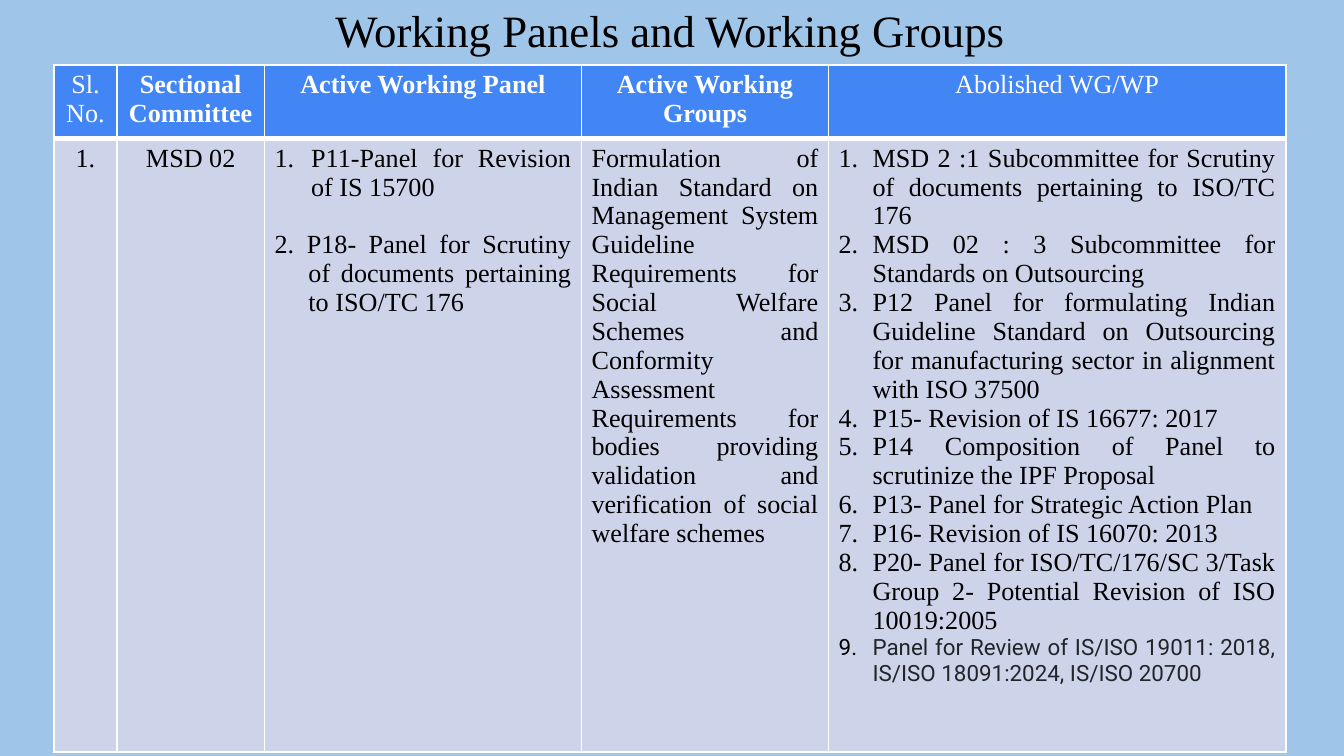
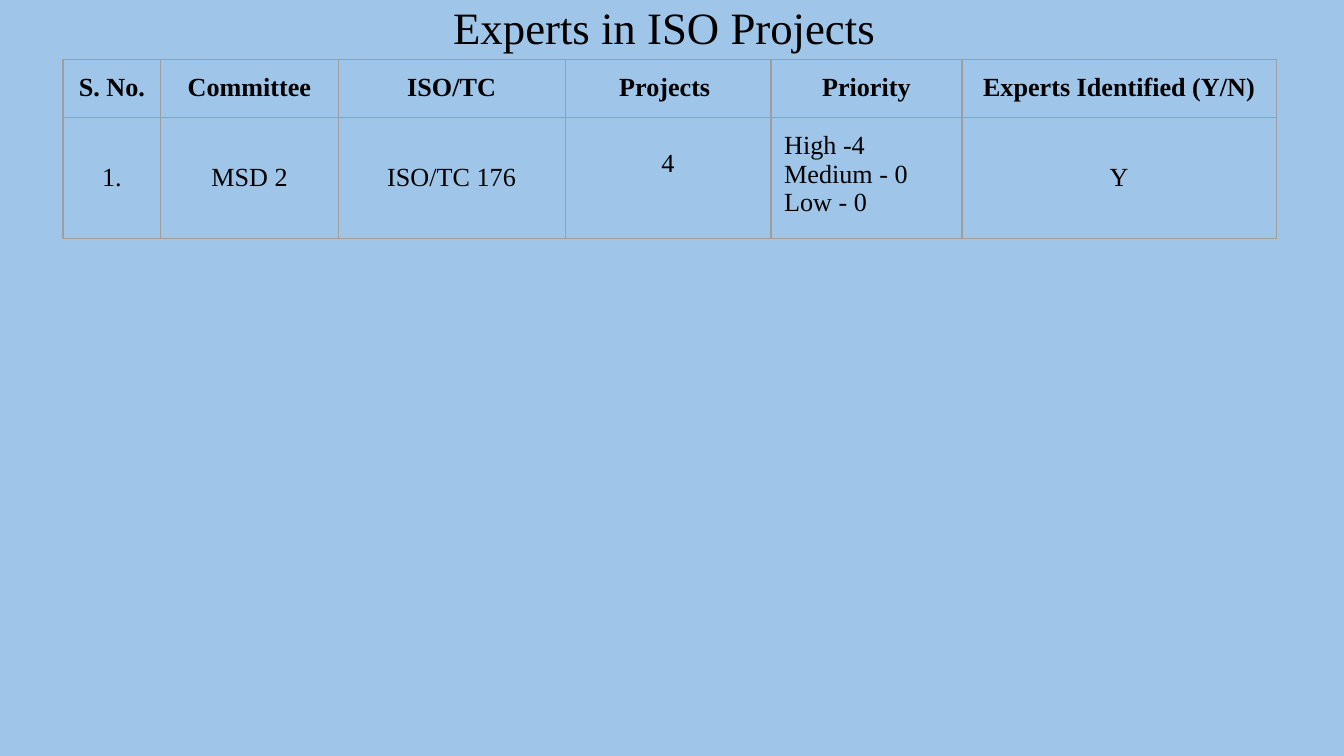
from dataclasses import dataclass, field
from typing import Optional

from lxml.etree import SubElement
from pptx import Presentation
from pptx.dml.color import RGBColor
from pptx.enum.text import MSO_ANCHOR, PP_ALIGN
from pptx.oxml.ns import qn
from pptx.presentation import Presentation as Deck
from pptx.slide import Slide
from pptx.table import _Cell as Cell
from pptx.text.text import _Paragraph as Paragraph
from pptx.util import Cm, Pt


@dataclass(frozen=True)
class TextStyle:
    """Font settings of a run."""

    color: str
    size: float = 14
    font: str = "Times New Roman"
    bold: bool = False


@dataclass(frozen=True)
class Theme:
    """Colours and type styles shared by the slides."""

    background: str = "9FC5E8"
    header_fill: str = "4285F4"
    body_fill: str = "CDD4EA"
    white: str = "FFFFFF"
    grey: str = "9E9E9E"
    black: str = "000000"
    title: TextStyle = TextStyle("000000", size=24)
    body: TextStyle = TextStyle("000000")
    heading: TextStyle = TextStyle("000000", bold=True)
    light: TextStyle = TextStyle("FFFFFF")
    light_heading: TextStyle = TextStyle("FFFFFF", bold=True)
    review: TextStyle = TextStyle("212529", size=12, font="Roboto")


THEME = Theme()


@dataclass(frozen=True)
class Line:
    """One paragraph of a cell."""

    text: str
    style: TextStyle = THEME.body
    align: PP_ALIGN = PP_ALIGN.CENTER
    hanging: float = 0
    numbered: bool = False
    space_before: float = 0


@dataclass(frozen=True)
class CellContent:
    """Paragraphs of a cell with their vertical placement."""

    lines: list[Line]
    anchor: MSO_ANCHOR = MSO_ANCHOR.TOP
    lift: float = 0


@dataclass(frozen=True)
class TableLook:
    """Fills, borders and insets of a table."""

    line_color: str
    line_width: float
    header_rule: float
    inset_x: float
    inset_y: float
    header_fill: Optional[str] = None
    body_fill: Optional[str] = None


@dataclass(frozen=True)
class TableSlide:
    """A title above a table that spans the same width."""

    title: str
    left: float
    title_height: float
    columns: list[float]
    rows: list[float]
    look: TableLook
    cells: list[list[CellContent]] = field(default_factory=list)


def single(text: str, style: TextStyle = THEME.body, **placement) -> CellContent:
    """Return a cell with one centred paragraph."""
    return CellContent([Line(text, style)], **placement)


def middle(text: str, lift: float = 0) -> CellContent:
    """Return a vertically centred cell."""
    return single(text, anchor=MSO_ANCHOR.MIDDLE, lift=lift)


def numbered(text: str, style: TextStyle = THEME.body, hanging: float = 0.64) -> Line:
    """Return a justified, automatically numbered paragraph."""
    return Line(text, style, PP_ALIGN.JUSTIFY, hanging, True)


PANELS = [
    numbered("P11-Panel for Revision of IS 15700", hanging=0.69),
    Line(
        "2. P18- Panel for Scrutiny of documents pertaining to ISO/TC 176",
        align=PP_ALIGN.JUSTIFY, hanging=0.64, space_before=15.5,
    ),
]

GROUPS = [
    Line(
        "Formulation of Indian Standard on Management System Guideline "
        "Requirements for Social Welfare Schemes and Conformity Assessment "
        "Requirements for bodies providing validation and verification of "
        "social welfare schemes",
        align=PP_ALIGN.JUSTIFY,
    )
]

ABOLISHED = [
    numbered(text)
    for text in (
        "MSD 2 :1 Subcommittee for Scrutiny of documents pertaining to ISO/TC 176",
        "MSD 02 : 3 Subcommittee for Standards on Outsourcing",
        "P12 Panel for formulating Indian Guideline Standard on Outsourcing "
        "for manufacturing sector in alignment with ISO 37500",
        "P15- Revision of IS 16677: 2017",
        "P14 Composition of Panel to scrutinize the IPF Proposal",
        "P13- Panel for Strategic Action Plan",
        "P16- Revision of IS 16070: 2013",
        "P20- Panel for ISO/TC/176/SC 3/Task Group 2- Potential Revision of ISO 10019:2005",
    )
] + [
    numbered(
        "Panel for Review of IS/ISO 19011: 2018, IS/ISO 18091:2024, IS/ISO 20700",
        THEME.review,
    )
]

WORKING_GROUPS = TableSlide(
    title="Working Panels and Working Groups",
    left=1.02,
    title_height=1.23,
    columns=[1.19, 2.79, 5.99, 4.67, 8.64],
    rows=[1.39, 11.6],
    look=TableLook(THEME.white, 1, 3, 0.19, 0.1, THEME.header_fill, THEME.body_fill),
    cells=[
        [
            single("Sl. No.", THEME.light),
            single("Sectional Committee", THEME.light_heading),
            single("Active Working Panel", THEME.light_heading),
            single("Active Working Groups", THEME.light_heading),
            single("Abolished WG/WP", THEME.light),
        ],
        [
            single("1."),
            single("MSD 02"),
            CellContent(PANELS),
            CellContent(GROUPS),
            CellContent(ABOLISHED),
        ],
    ],
)

EXPERTS = TableSlide(
    title="Experts in ISO Projects ",
    left=1.19,
    title_height=1.13,
    columns=[1.85, 3.35, 4.29, 3.89, 3.61, 5.94],
    rows=[1.07, 2.15],
    look=TableLook(THEME.grey, 0.75, 0.75, 0.25, 0.25),
    cells=[
        [
            single(text, THEME.heading)
            for text in (
                "S. No.", "Committee", "ISO/TC", "Projects ", "Priority",
                "Experts Identified (Y/N)",
            )
        ],
        [
            middle("1."),
            middle("MSD 2"),
            middle("ISO/TC 176"),
            middle("4", lift=0.54),
            CellContent([
                Line(text, align=PP_ALIGN.LEFT)
                for text in ("High -4", "Medium - 0", "Low - 0")
            ]),
            middle("Y"),
        ],
    ],
)


def write_line(paragraph: Paragraph, line: Line) -> None:
    """Write and format one paragraph."""
    paragraph.text = line.text
    paragraph.alignment = line.align
    if line.space_before:
        paragraph.space_before = Pt(line.space_before)
    for run in paragraph.runs:
        run.font.name = line.style.font
        run.font.size = Pt(line.style.size)
        run.font.bold = line.style.bold
        run.font.color.rgb = RGBColor.from_string(line.style.color)
    properties = paragraph._p.get_or_add_pPr()
    if line.hanging:
        properties.set("marL", str(Cm(line.hanging)))
        properties.set("indent", str(-Cm(line.hanging)))
    if line.numbered:
        color = SubElement(properties, qn("a:buClr"))
        SubElement(color, qn("a:srgbClr"), val=THEME.black)
        SubElement(properties, qn("a:buAutoNum"), type="arabicPeriod")


def add_border(cell: Cell, side: str, color: str, width: float) -> None:
    """Add a solid border to one side of a cell."""
    properties = cell._tc.get_or_add_tcPr()
    border = SubElement(properties, qn(f"a:ln{side}"), w=str(Pt(width)))
    fill = SubElement(border, qn("a:solidFill"))
    SubElement(fill, qn("a:srgbClr"), val=color)


def fill_cell(cell: Cell, content: CellContent, look: TableLook, is_header: bool) -> None:
    """Format a cell and write its paragraphs."""
    cell.margin_left = cell.margin_right = Cm(look.inset_x)
    cell.margin_top = Cm(look.inset_y)
    cell.margin_bottom = Cm(look.inset_y + content.lift)
    cell.vertical_anchor = content.anchor
    rule_side = "B" if is_header else "T"
    for side in "LRTB":
        width = look.header_rule if side == rule_side else look.line_width
        add_border(cell, side, look.line_color, width)
    color = look.header_fill if is_header else look.body_fill
    if color:
        cell.fill.solid()
        cell.fill.fore_color.rgb = RGBColor.from_string(color)
    else:
        cell.fill.background()
    cell.text_frame.text = "\n".join(line.text for line in content.lines)
    for paragraph, line in zip(cell.text_frame.paragraphs, content.lines):
        write_line(paragraph, line)


def add_title(slide: Slide, page: TableSlide) -> None:
    """Add the centred title at the top of the slide."""
    shape = slide.shapes.add_textbox(
        Cm(page.left), 0, Cm(sum(page.columns)), Cm(page.title_height)
    )
    frame = shape.text_frame
    frame.word_wrap = True
    frame.vertical_anchor = MSO_ANCHOR.MIDDLE
    frame.margin_left = frame.margin_right = Cm(0.18)
    frame.margin_top = frame.margin_bottom = Cm(0.1)
    write_line(frame.paragraphs[0], Line(page.title, THEME.title))
    frame.paragraphs[0].line_spacing = 0.9


def add_page_table(slide: Slide, page: TableSlide) -> None:
    """Add the table directly below the title."""
    table = slide.shapes.add_table(
        len(page.rows), len(page.columns), Cm(page.left), Cm(page.title_height),
        Cm(sum(page.columns)), Cm(sum(page.rows)),
    ).table
    table.first_row = table.horz_banding = False
    for column, width in zip(table.columns, page.columns):
        column.width = Cm(width)
    for row_index, (row, height) in enumerate(zip(table.rows, page.rows)):
        row.height = Cm(height)
        for cell, content in zip(row.cells, page.cells[row_index]):
            fill_cell(cell, content, page.look, row_index == 0)


def add_page(presentation: Deck, page: TableSlide) -> None:
    """Add a slide with its background, title and table."""
    slide = presentation.slides.add_slide(presentation.slide_layouts[6])
    slide.background.fill.solid()
    slide.background.fill.fore_color.rgb = RGBColor.from_string(THEME.background)
    add_title(slide, page)
    add_page_table(slide, page)


def main() -> None:
    """Build and save the presentation."""
    presentation = Presentation()
    presentation.slide_width = Cm(25.4)
    presentation.slide_height = Cm(14.29)
    for page in (WORKING_GROUPS, EXPERTS):
        add_page(presentation, page)
    presentation.save("out.pptx")


if __name__ == "__main__":
    main()
